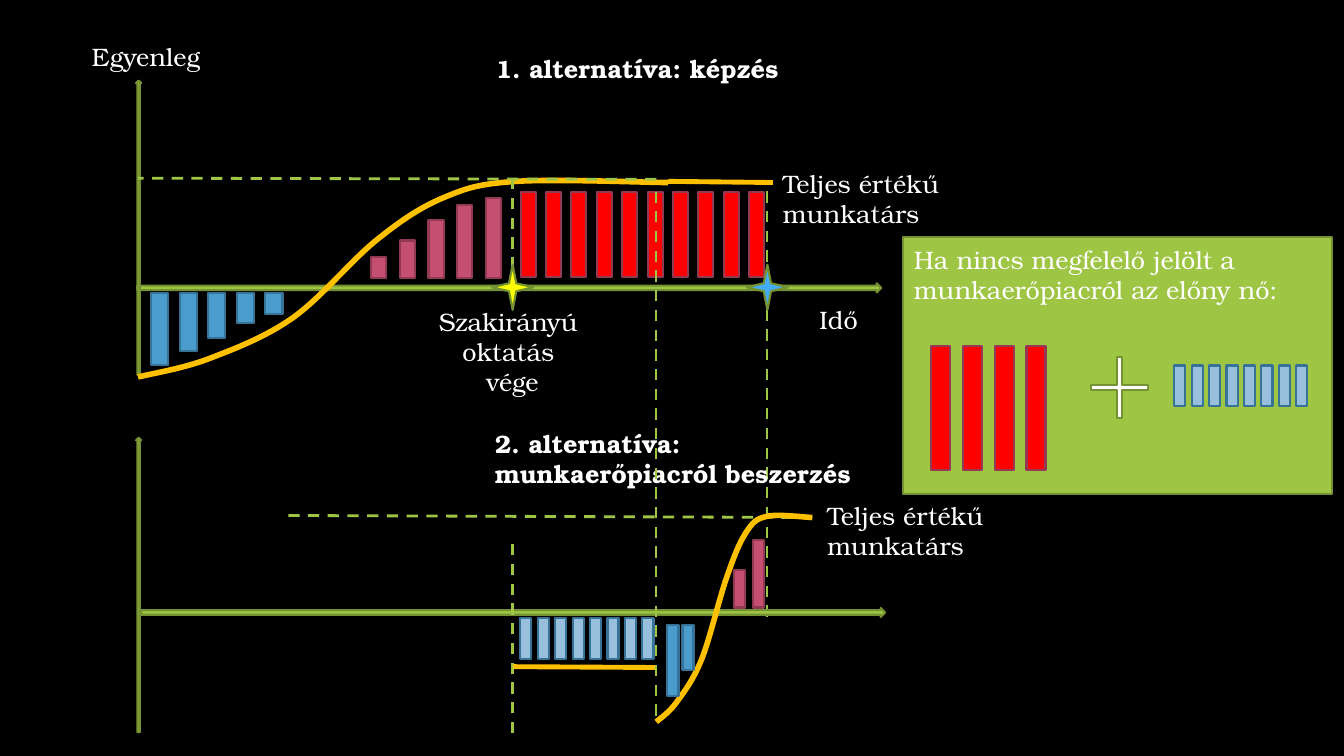
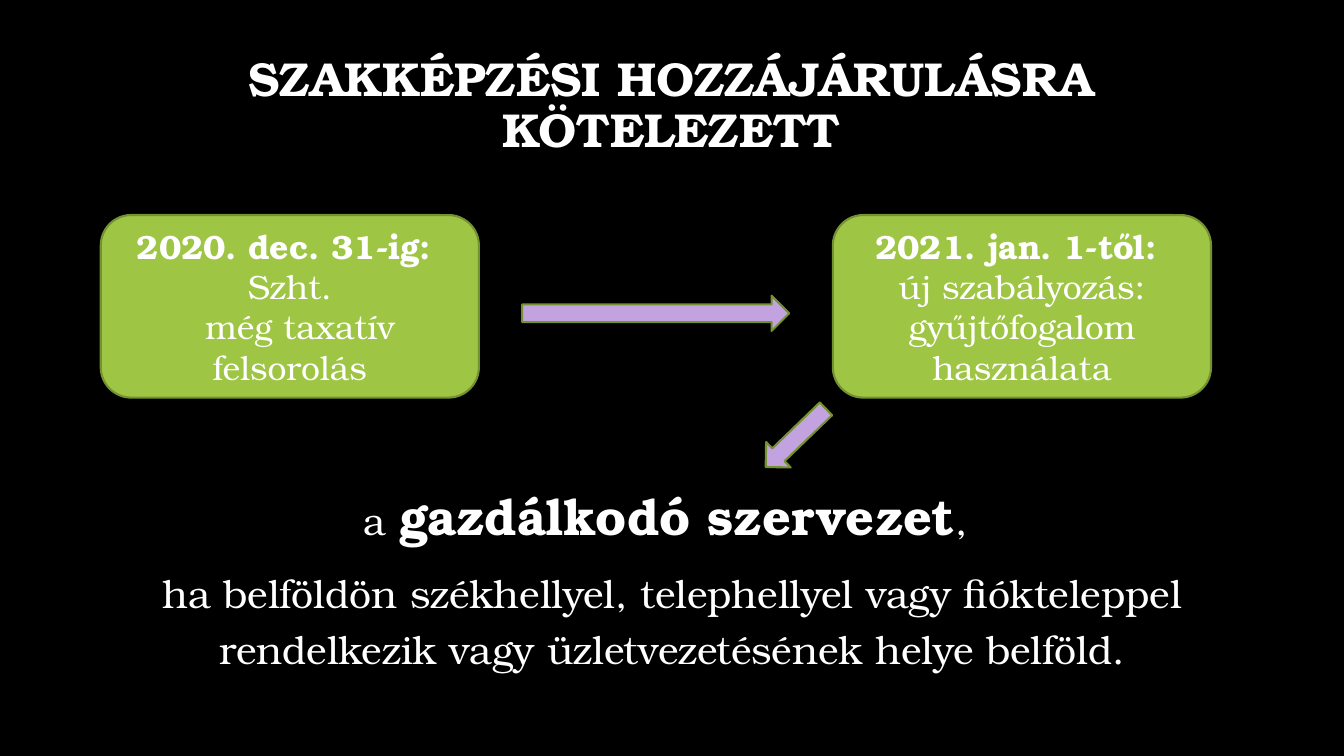
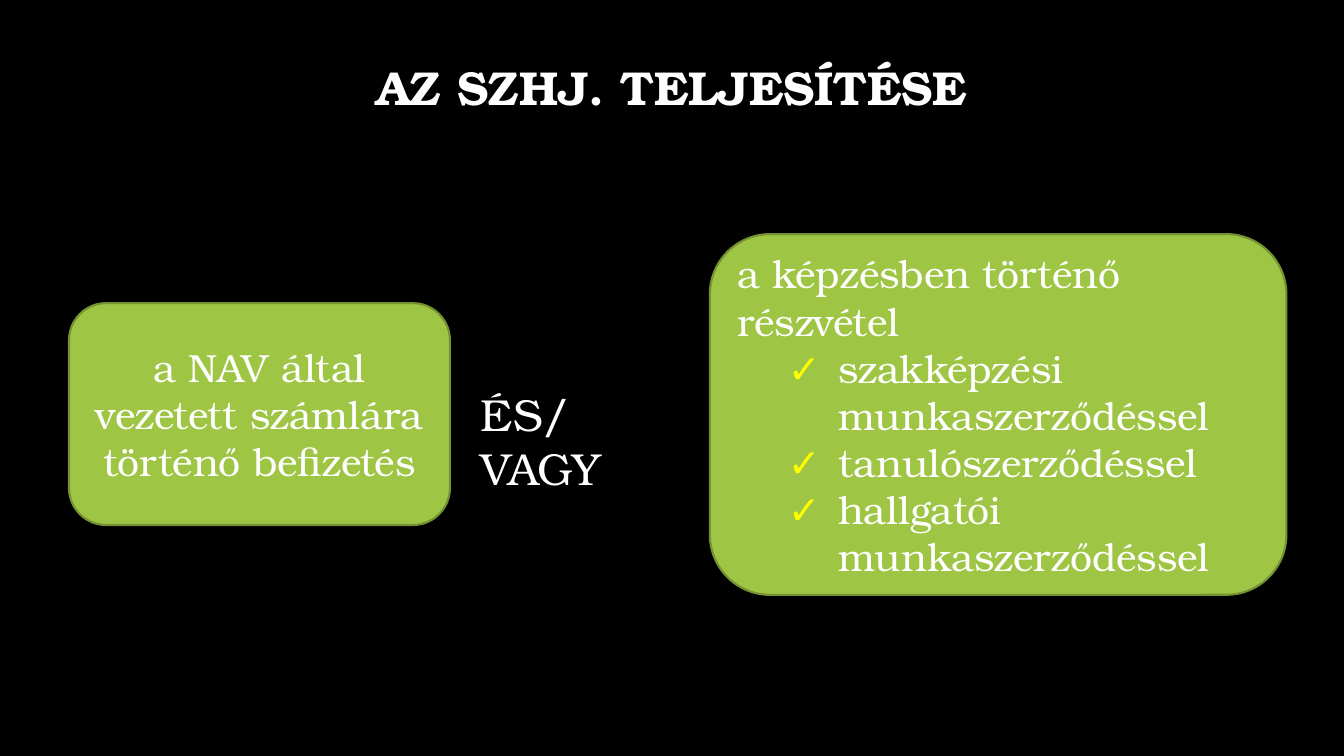
from dataclasses import dataclass
from typing import NamedTuple

from lxml.etree import SubElement
from pptx import Presentation
from pptx.dml.color import RGBColor
from pptx.enum.dml import MSO_LINE
from pptx.enum.shapes import MSO_CONNECTOR, MSO_SHAPE
from pptx.enum.text import MSO_ANCHOR, MSO_AUTO_SIZE, PP_ALIGN
from pptx.oxml.ns import qn
from pptx.util import Cm, Pt


@dataclass(frozen=True)
class Theme:
    font: str = "TeX Gyre Bonum"
    # Colours
    background: str = "000000"
    text: str = "FFFFFF"
    green: str = "9EC544"
    green_edge: str = "759232"
    blue: str = "4A9CCC"
    light_blue: str = "98C0DD"
    blue_edge: str = "377397"
    pink: str = "C54F71"
    red: str = "FF0000"
    pink_edge: str = "923A54"
    curve: str = "FFC000"
    yellow: str = "FFFF00"
    sky: str = "45ADF8"
    arrow: str = "C2A3DF"
    # Type sizes and line widths in points
    label_size: int = 18
    card_size: int = 24
    body_size: int = 28
    joiner_size: int = 32
    title_size: int = 34
    strong_size: int = 36
    edge: float = 1.5
    dash: float = 2
    flat: float = 3.5
    bold_curve: float = 4


THEME = Theme()


class Box(NamedTuple):
    """Left, top, width and height in centimetres."""
    left: float
    top: float
    width: float
    height: float

    def inner(self, left, top, width, height):
        return Box(self.left + left, self.top + top, width, height)

    def point(self, x, y):
        return self.left + x, self.top + y

    def lengths(self):
        return [Cm(value) for value in self]


# ---- Shared building blocks ----

def color(code):
    return RGBColor.from_string(code)


def write_text(frame, paragraphs, size=THEME.label_size, bold=False, align=PP_ALIGN.LEFT,
               anchor=MSO_ANCHOR.TOP, line_spacing=None, space_before=None):
    """Each paragraph is a string or a list of (text, size, bold) runs."""
    frame.word_wrap = True
    frame.vertical_anchor = anchor
    for number, content in enumerate(paragraphs):
        paragraph = frame.paragraphs[0] if number == 0 else frame.add_paragraph()
        paragraph.alignment = align
        if line_spacing:
            paragraph.line_spacing = line_spacing
        if space_before is not None:
            paragraph.space_before = Pt(space_before)
        runs = [(content, size, bold)] if isinstance(content, str) else content
        for text, run_size, run_bold in runs:
            run = paragraph.add_run()
            run.text = text
            run.font.name = THEME.font
            run.font.size = Pt(run_size)
            run.font.bold = run_bold
            run.font.color.rgb = color(THEME.text)
    return frame.paragraphs


def set_indent(paragraph, left, first):
    properties = paragraph._p.get_or_add_pPr()
    properties.set("marL", str(Cm(left)))
    properties.set("indent", str(Cm(first)))
    return properties


def set_check_bullet(paragraph):
    properties = set_indent(paragraph, 2.54, -1.27)
    bullet_color = SubElement(properties, qn("a:buClr"))
    SubElement(bullet_color, qn("a:srgbClr")).set("val", THEME.yellow)
    SubElement(properties, qn("a:buFont")).set("typeface", THEME.font)
    SubElement(properties, qn("a:buChar")).set("char", "✓")


def add_label(slide, box, paragraphs, **text_format):
    shape = slide.shapes.add_textbox(*box.lengths())
    write_text(shape.text_frame, paragraphs, **text_format)
    shape.text_frame.auto_size = MSO_AUTO_SIZE.SHAPE_TO_FIT_TEXT


def add_figure(slide, kind, box, fill=THEME.green, edge=THEME.green_edge):
    shape = slide.shapes.add_shape(kind, *box.lengths())
    shape.shadow.inherit = False
    shape.fill.solid()
    shape.fill.fore_color.rgb = color(fill)
    shape.line.color.rgb = color(edge)
    shape.line.width = Pt(THEME.edge)
    return shape


def add_card(slide, box, paragraphs, **text_format):
    shape = add_figure(slide, MSO_SHAPE.ROUNDED_RECTANGLE, box)
    return write_text(shape.text_frame, paragraphs, anchor=MSO_ANCHOR.MIDDLE, **text_format)


def add_line(slide, start, end, line_color=THEME.green, width=THEME.dash, dashed=True):
    line = slide.shapes.add_connector(MSO_CONNECTOR.STRAIGHT, *map(Cm, start + end))
    line.line.color.rgb = color(line_color)
    line.line.width = Pt(width)
    if dashed:
        line.line.dash_style = MSO_LINE.DASH
    SubElement(line._element.spPr, qn("a:effectLst"))


def add_flat_curve(slide, start, end):
    add_line(slide, start, end, THEME.curve, THEME.flat, dashed=False)


def smooth_points(anchors):
    """First anchor, then two control points and an anchor for each curve segment."""
    padded = [anchors[0], *anchors, anchors[-1]]
    points = [anchors[0]]
    for before, start, end, after in zip(padded, padded[1:], padded[2:], padded[3:]):
        points.append(tuple(b + (c - a) / 6 for a, b, c in zip(before, start, end)))
        points.append(tuple(c - (d - b) / 6 for b, c, d in zip(start, end, after)))
        points.append(end)
    return points


def add_curve(slide, box, anchors):
    points = [tuple(map(Cm, box.point(x, y))) for x, y in smooth_points(anchors)]
    builder = slide.shapes.build_freeform(*points[0])
    builder.add_line_segments(points[1:], close=False)
    shape = builder.convert_to_shape()
    # Join each three straight steps into one cubic segment
    steps = list(shape._element.iter(qn("a:lnTo")))
    outline = steps[0].getparent()
    for first in range(0, len(steps), 3):
        segment = SubElement(outline, qn("a:cubicBezTo"))
        for step in steps[first:first + 3]:
            segment.append(step[0])
            outline.remove(step)
    shape.shadow.inherit = False
    shape.fill.background()
    shape.line.color.rgb = color(THEME.curve)
    shape.line.width = Pt(THEME.bold_curve)


def add_bars(slide, box, left, baseline, step, width, heights, fill, edge, below=False):
    """A row of bars that stand on the baseline or hang below it."""
    for number, height in enumerate(heights):
        top = baseline if below else baseline - height
        bar = box.inner(left + number * step, top, width, height)
        add_figure(slide, MSO_SHAPE.RECTANGLE, bar, fill, edge)


def add_salary_bars(slide, box, left, top):
    add_bars(slide, box, left, top, 0.44, 0.28, [1.02] * 8,
             THEME.light_blue, THEME.blue_edge, below=True)


def add_axes(slide, box, shift, depth):
    add_figure(slide, MSO_SHAPE.RIGHT_ARROW, box.inner(shift, depth, 18.75, 0.23))
    add_figure(slide, MSO_SHAPE.UP_ARROW, box.inner(0, 0, 0.13, box.height))


def add_title(slide, box, text):
    title = slide.shapes.title
    title.left, title.top, title.width, title.height = box.lengths()
    write_text(title.text_frame, [text], size=THEME.title_size, bold=True,
               align=PP_ALIGN.CENTER, anchor=MSO_ANCHOR.MIDDLE, line_spacing=0.9)
    title.text_frame.auto_size = MSO_AUTO_SIZE.NONE


# ---- Regions of the comparison slide ----

def draw_hiring(slide, box):
    add_axes(slide, box, 0.13, 4.29)
    add_line(slide, box.point(9.48, 7.44), box.point(9.48, 2.51))
    add_line(slide, box.point(17.04, 2.01), box.point(3.78, 1.96))
    add_label(slide, box.inner(17.17, 1.45, 7.75, 1.02), ["Teljes értékű munkatárs"])
    add_curve(slide, box, [(13.11, 7.16), (13.61, 6.68), (14.25, 5.59), (14.88, 3.53),
                           (15.37, 2.39), (15.9, 1.98), (17.04, 2.01)])
    add_bars(slide, box, 13.39, 4.72, 0.38, 0.28, [1.8, 1.14],
             THEME.blue, THEME.blue_edge, below=True)
    add_bars(slide, box, 15.06, 4.28, 0.48, 0.29, [0.94, 1.7], THEME.pink, THEME.pink_edge)
    add_label(slide, box.inner(8.79, -0.36, 13.82, 1.8),
              ["2. alternatíva:", "munkaerőpiacról beszerzés"], bold=True)
    add_flat_curve(slide, box.point(9.5, 5.77), box.point(13.11, 5.79))
    add_salary_bars(slide, box, 9.68, 4.55)


def draw_training(slide, box):
    add_label(slide, box.inner(5.61, 5.56, 7.75, 4.11),
              ["Szakirányú ", "oktatás ", "vége"], align=PP_ALIGN.CENTER)
    add_axes(slide, box, 0.03, 5.11)
    add_label(slide, box.inner(-1.37, -1.12, 3.81, 1.02), ["Egyenleg"])
    add_label(slide, box.inner(16.97, 5.51, 3.81, 1.02), ["Idő"])
    add_curve(slide, box, [(0.05, 7.47), (1.83, 7.01), (3.96, 5.97), (6.07, 4.01),
                           (7.75, 2.95), (9.58, 2.54), (13.41, 2.57)])
    add_line(slide, box.point(9.48, 5.23), box.point(9.48, 2.51))
    add_line(slide, box.point(13.11, 2.49), box.point(0.05, 2.46))
    add_label(slide, box.inner(16.05, 2.08, 7.75, 1.02), ["Teljes értékű munkatárs"])
    add_bars(slide, box, 0.38, 5.36, 0.72, 0.43, [1.8, 1.45, 1.14, 0.76, 0.53],
             THEME.blue, THEME.blue_edge, below=True)
    add_bars(slide, box, 5.93, 4.97, 0.72, 0.38, [0.53, 0.94, 1.45, 1.83, 2.01],
             THEME.pink, THEME.pink_edge)
    add_bars(slide, box, 9.69, 4.96, 0.64, 0.38, [2.16] * 10, THEME.red, THEME.pink_edge)
    add_label(slide, box.inner(8.81, -0.81, 10.06, 1.02), ["1. alternatíva: képzés"], bold=True)
    add_flat_curve(slide, box.point(13.41, 2.54), box.point(16.05, 2.57))
    # Milestones on the time axis
    for left, fill in ((8.97, THEME.yellow), (15.39, THEME.sky)):
        add_figure(slide, MSO_SHAPE.STAR_4_POINT, box.inner(left, 4.64, 1.04, 1.14), fill)


def draw_advantage(slide, box):
    add_figure(slide, MSO_SHAPE.RECTANGLE, box)
    add_label(slide, box.inner(0.02, 0.05, 10.8, 1.8),
              ["Ha nincs megfelelő jelölt a munkaerőpiacról az előny nő:"])
    add_bars(slide, box, 0.71, 5.88, 0.8, 0.48, [3.12] * 4, THEME.red, THEME.pink_edge)
    plus = add_figure(slide, MSO_SHAPE.MATH_PLUS, box.inner(4.47, 2.74, 1.96, 2.11), THEME.text)
    plus.adjustments[0] = 0.07
    add_salary_bars(slide, box, 6.83, 3.24)


# ---- Slides ----

def build_comparison(presentation):
    slide = presentation.slides.add_slide(presentation.slide_layouts[6])
    add_line(slide, (19.33, 15.54), (19.33, 4.78))
    draw_hiring(slide, Box(3.43, 11.03, 18.88, 7.42))
    draw_advantage(slide, Box(22.76, 5.97, 10.8, 6.48))
    draw_training(slide, Box(3.43, 2.03, 18.88, 7.42))
    add_line(slide, (16.53, 18.03), (16.53, 4.85))


def build_obligation(presentation):
    slide = presentation.slides.add_slide(presentation.slide_layouts[1])
    add_title(slide, Box(2.54, 0.84, 28.75, 3.68), "SZAKKÉPZÉSI HOZZÁJÁRULÁSRA KÖTELEZETT")

    # Definition
    body = slide.placeholders[1]
    body.left, body.top, body.width, body.height = Box(2.33, 11.79, 29.21, 4.6).lengths()
    size = THEME.body_size
    paragraphs = write_text(body.text_frame, [
        [("a ", size, False), ("gazdálkodó szervezet", THEME.strong_size, True),
         (", ", size, False)],
        "ha belföldön székhellyel, telephellyel vagy fiókteleppel rendelkezik "
        "vagy üzletvezetésének helye belföld.",
    ], size=size, align=PP_ALIGN.CENTER, line_spacing=1.2, space_before=10)
    body.text_frame.auto_size = MSO_AUTO_SIZE.NONE
    for paragraph in paragraphs:
        SubElement(set_indent(paragraph, 0, 0), qn("a:buNone"))

    # Old and new rule
    cards = (
        (2.54, "2020. dec. 31-ig: ", ["Szht.", "még taxatív felsorolás"]),
        (20.99, "2021. jan. 1-től: ", ["új szabályozás: gyűjtőfogalom használata"]),
    )
    for left, heading, lines in cards:
        paragraphs = add_card(slide, Box(left, 5.42, 9.53, 4.6),
                              [[(heading, THEME.card_size, True)], *lines],
                              size=THEME.card_size, align=PP_ALIGN.CENTER)
        if len(lines) > 1:
            set_indent(paragraphs[-1], 0, 0.52)

    # Arrows
    for box, angle in ((Box(13.16, 7.45, 6.73, 0.89), 0), (Box(19, 10.59, 2.11, 0.89), 136)):
        arrow = add_figure(slide, MSO_SHAPE.RIGHT_ARROW, box, THEME.arrow)
        arrow.rotation = angle


def build_fulfilment(presentation):
    slide = presentation.slides.add_slide(presentation.slide_layouts[5])
    add_title(slide, Box(2.56, 0.43, 28.75, 3.68), "AZ SZHJ. TELJESÍTÉSE")
    add_card(slide, Box(1.74, 7.64, 9.6, 5.59),
             ["a NAV által vezetett számlára történő befizetés"],
             size=THEME.body_size, align=PP_ALIGN.CENTER)
    paragraphs = add_card(slide, Box(17.89, 5.9, 14.53, 9.09), [
        "a képzésben történő részvétel",
        "szakképzési munkaszerződéssel",
        "tanulószerződéssel",
        "hallgatói munkaszerződéssel",
    ], size=THEME.body_size)
    for paragraph in paragraphs[1:]:
        set_check_bullet(paragraph)
    add_label(slide, Box(11.87, 9.63, 5.49, 1.63), ["ÉS/VAGY"], size=THEME.joiner_size)


def main():
    presentation = Presentation()
    presentation.slide_width = Cm(33.87)
    presentation.slide_height = Cm(19.05)
    background = presentation.slide_master.background.fill
    background.solid()
    background.fore_color.rgb = color(THEME.background)
    build_comparison(presentation)
    build_obligation(presentation)
    build_fulfilment(presentation)
    presentation.save("out.pptx")


if __name__ == "__main__":
    main()
